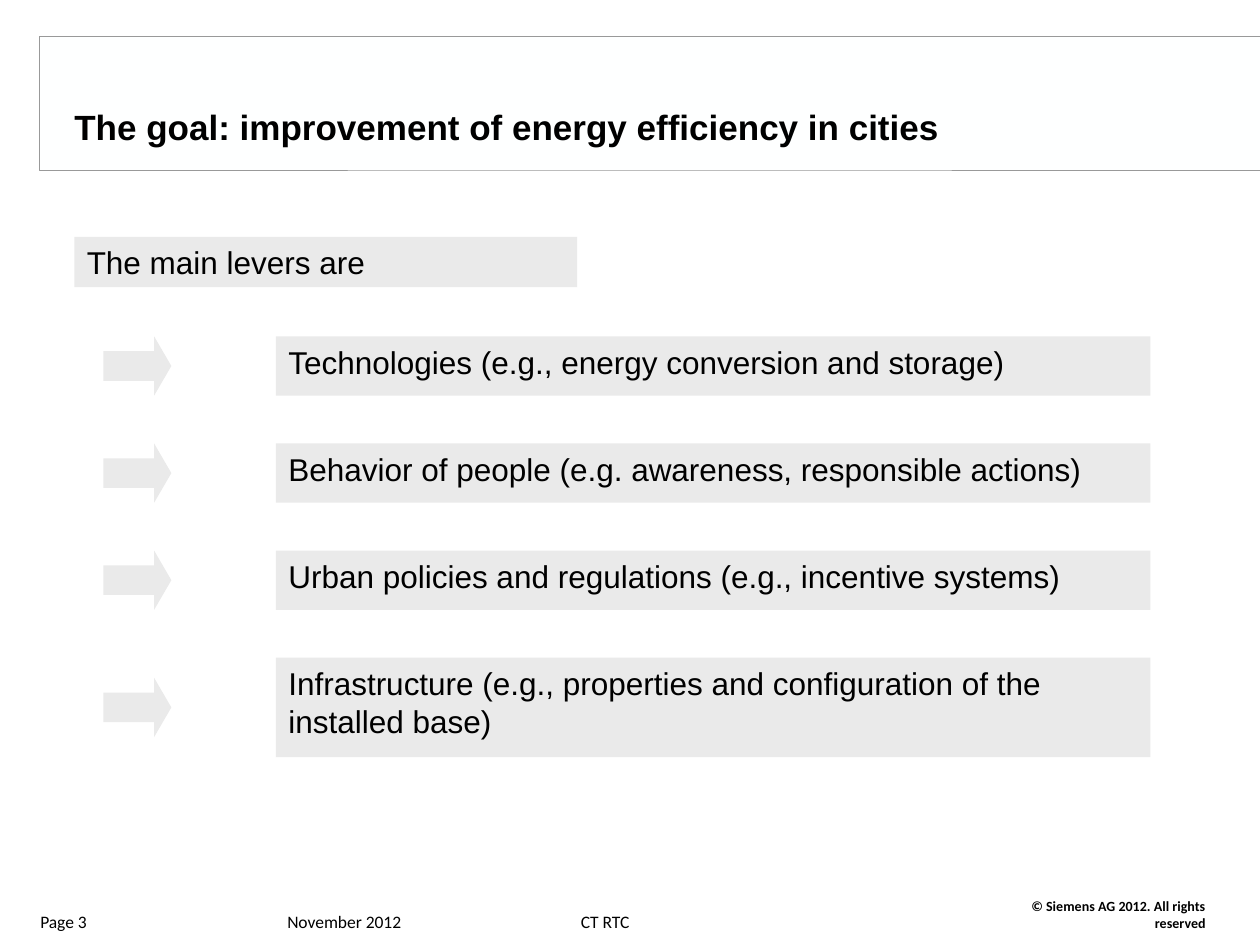
from dataclasses import dataclass

from pptx import Presentation
from pptx.dml.color import RGBColor
from pptx.enum.shapes import MSO_SHAPE
from pptx.enum.text import MSO_ANCHOR, PP_ALIGN
from pptx.util import Inches, Pt

RECTANGLE = MSO_SHAPE.RECTANGLE
RIGHT_ARROW = MSO_SHAPE.RIGHT_ARROW
TOP, BOTTOM = MSO_ANCHOR.TOP, MSO_ANCHOR.BOTTOM
LEFT, RIGHT = PP_ALIGN.LEFT, PP_ALIGN.RIGHT


@dataclass(frozen=True)
class Theme:
    text: RGBColor = RGBColor(0x00, 0x00, 0x00)
    panel: RGBColor = RGBColor(0xEA, 0xEA, 0xEA)
    banner: RGBColor = RGBColor(0xFE, 0xFF, 0xFF)
    banner_line: RGBColor = RGBColor(0x99, 0x99, 0x99)
    body_font: str = "Arial"
    footer_font: str = "Calibri"
    title_size: int = 20
    body_size: int = 18
    footer_size: int = 10
    copyright_size: int = 8


THEME = Theme()

# Text and box height of each lever
LEVERS = [
    ("Technologies (e.g., energy conversion and storage)", 0.47),
    ("Behavior of people (e.g. awareness, responsible actions)", 0.47),
    ("Urban policies and regulations (e.g., incentive systems)", 0.47),
    ("Infrastructure (e.g., properties and configuration of the installed base)", 0.79),
]
LEVER_TOP = 2.67
LEVER_GAP = 0.38
ARROW_HEIGHT = 0.47

# Text, left and width of each footer item
FOOTERS = [
    ("Page 3", 0.32, 0.57),
    ("November 2012", 2.28, 0.91),
    ("CT RTC", 4.61, 0.39),
]


def write(shape, text, font_name, size, bold=False, align=LEFT):
    paragraph = shape.text_frame.paragraphs[0]
    paragraph.text = text
    paragraph.alignment = align
    font = paragraph.runs[0].font
    font.name = font_name
    font.size = Pt(size)
    font.bold = bold
    font.color.rgb = THEME.text


def add_filled_shape(shapes, kind, left, top, width, height, fill):
    shape = shapes.add_shape(
        kind, Inches(left), Inches(top), Inches(width), Inches(height)
    )
    shape.shadow.inherit = False
    shape.fill.solid()
    shape.fill.fore_color.rgb = fill
    shape.line.fill.background()
    return shape


def add_label(slide, text, left, top, width, height, font_name, size,
              bold=False, align=LEFT, wrap=True):
    """Add a text box without margins whose text sits on its bottom edge."""
    label = slide.shapes.add_textbox(
        Inches(left), Inches(top), Inches(width), Inches(height)
    )
    frame = label.text_frame
    frame.margin_left = frame.margin_right = 0
    frame.margin_top = frame.margin_bottom = 0
    frame.vertical_anchor = BOTTOM
    frame.word_wrap = wrap
    write(label, text, font_name, size, bold, align)


def add_panel(shapes, text, left, top, width, height):
    panel = add_filled_shape(shapes, RECTANGLE, left, top, width, height, THEME.panel)
    panel.text_frame.vertical_anchor = TOP
    panel.text_frame.word_wrap = True
    write(panel, text, THEME.body_font, THEME.body_size)


def add_lever(slide, text, top, height):
    """Group a text panel with an arrow centred on its height."""
    shapes = slide.shapes.add_group_shape().shapes
    add_panel(shapes, text, 2.19, top, 6.94, height)
    arrow_top = top + (height - ARROW_HEIGHT) / 2
    arrow = add_filled_shape(
        shapes, RIGHT_ARROW, 0.82, arrow_top, 0.54, ARROW_HEIGHT, THEME.panel
    )
    arrow.adjustments[1] = 0.29


def add_header(slide):
    banner = add_filled_shape(
        slide.shapes, RECTANGLE, 0.31, 0.29, 9.69, 1.06, THEME.banner
    )
    banner.line.color.rgb = THEME.banner_line
    banner.line.width = Pt(0.5)
    add_label(slide, "The goal: improvement of energy efficiency in cities",
              0.59, 0.28, 7.22, 0.89, THEME.body_font, THEME.title_size, bold=True)


def add_footer(slide):
    for text, left, width in FOOTERS:
        add_label(slide, text, left, 7.23, width, 0.17,
                  THEME.footer_font, THEME.footer_size, wrap=False)
    add_label(slide, "© Siemens AG 2012. All rights reserved",
              7.77, 7.12, 1.8, 0.27, THEME.footer_font, THEME.copyright_size,
              bold=True, align=RIGHT)


def main():
    presentation = Presentation()
    presentation.slide_width = Inches(10)
    presentation.slide_height = Inches(7.5)
    slide = presentation.slides.add_slide(presentation.slide_layouts[6])

    add_header(slide)
    add_panel(slide.shapes, "The main levers are", 0.59, 1.88, 3.99, 0.4)
    top = LEVER_TOP
    for text, height in LEVERS:
        add_lever(slide, text, top, height)
        top += height + LEVER_GAP
    add_footer(slide)

    presentation.save("out.pptx")


if __name__ == "__main__":
    main()
